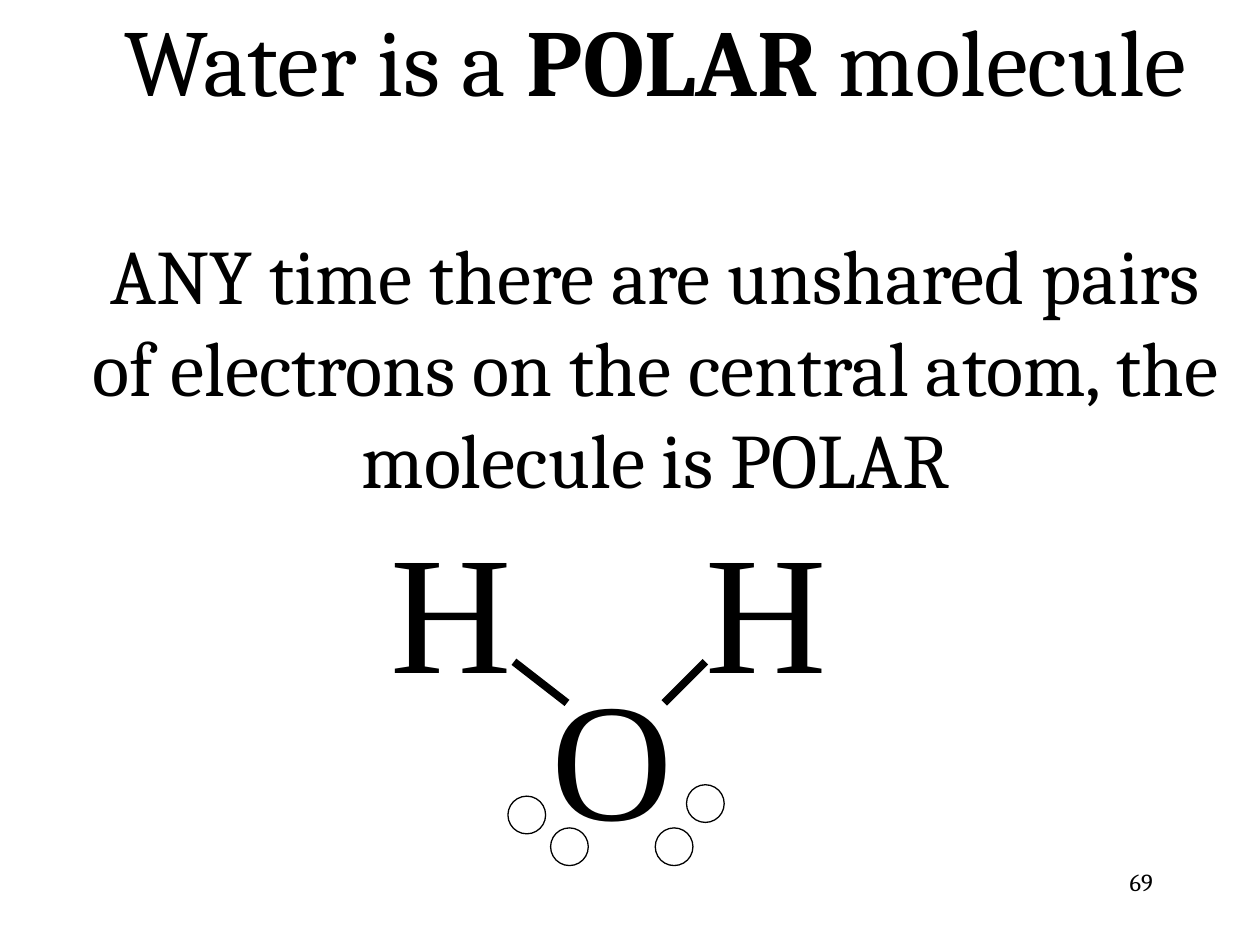
from typing import NamedTuple

import pptx
import pptx.dml.color
import pptx.enum.shapes
import pptx.enum.text
import pptx.oxml.ns
import pptx.util
from lxml import etree

Cm = pptx.util.Cm
Pt = pptx.util.Pt
Align = pptx.enum.text.PP_ALIGN
Anchor = pptx.enum.text.MSO_ANCHOR

COLORS = {"ink": "000000", "paper": "FFFFFF"}
BODY_FONT = "Cambria"
ATOM_FONT = "Times New Roman"
ATOM_WIDTH, ATOM_HEIGHT = 3.0, 4.32
ELECTRON_SIZE = 0.76


class Atom(NamedTuple):
    symbol: str
    center: float
    top: float


class Bond(NamedTuple):
    x1: float
    y1: float
    x2: float
    y2: float


class Electron(NamedTuple):
    left: float
    top: float


ATOMS = [Atom("H", 15.44, 10.19), Atom("H", 9.09, 10.19), Atom("O", 12.34, 13.16)]
BONDS = [Bond(10.36, 13.34, 11.43, 14.17), Bond(13.39, 14.17, 14.22, 13.34)]
ELECTRONS = [
    Electron(13.84, 15.82),
    Electron(13.21, 16.69),
    Electron(11.1, 16.69),
    Electron(10.24, 16.05),
]


def color(name: str) -> pptx.dml.color.RGBColor:
    return pptx.dml.color.RGBColor.from_string(COLORS[name])


def add_box(s, left: float, top: float, width: float, height: float):
    tf = s.shapes.add_textbox(Cm(left), Cm(top), Cm(width), Cm(height)).text_frame
    tf.word_wrap = True
    return tf


def style_run(r, size: int, font: str = BODY_FONT, bold: bool = False) -> None:
    r.font.size = Pt(size)
    r.font.name = font
    r.font.bold = bold
    r.font.color.rgb = color("ink")


def draw_atom(s, atom: Atom) -> None:
    tf = add_box(s, atom.center - ATOM_WIDTH / 2, atom.top, ATOM_WIDTH, ATOM_HEIGHT)
    tf.margin_left = tf.margin_right = tf.margin_top = tf.margin_bottom = 0
    tf.text = atom.symbol
    p = tf.paragraphs[0]
    p.alignment = Align.CENTER
    style_run(p.runs[0], 96, ATOM_FONT)


def draw_electron(s, electron: Electron) -> None:
    sp = s.shapes.add_shape(
        pptx.enum.shapes.MSO_SHAPE.FLOWCHART_CONNECTOR,
        Cm(electron.left), Cm(electron.top), Cm(ELECTRON_SIZE), Cm(ELECTRON_SIZE),
    )
    sp.shadow.inherit = False
    sp.fill.solid()
    sp.fill.fore_color.rgb = color("paper")
    sp.line.color.rgb = color("ink")
    sp.line.width = Pt(0.75)


def draw_bond(s, bond: Bond) -> None:
    line = s.shapes.add_connector(
        pptx.enum.shapes.MSO_CONNECTOR.STRAIGHT, *(Cm(v) for v in bond)
    )
    line.line.color.rgb = color("ink")
    line.line.width = Pt(4.5)
    etree.SubElement(line._element.spPr, pptx.oxml.ns.qn("a:effectLst"))


def draw_title(s) -> None:
    tf = add_box(s, 1.47, 3.51, 23.5, 3.18)
    tf.vertical_anchor = Anchor.MIDDLE
    p = tf.paragraphs[0]
    p.alignment = Align.CENTER
    for text, bold in [("Water is a ", False), ("POLAR ", True), ("molecule", False)]:
        r = p.add_run()
        r.text = text
        style_run(r, 54, bold=bold)
    p = tf.add_paragraph()
    p.text = (
        "ANY time there are unshared pairs of electrons on the central atom, "
        "the molecule is POLAR"
    )
    p.alignment = Align.CENTER
    p.space_before = Pt(64)
    style_run(p.runs[0], 44)


def draw_slide_number(s) -> None:
    tf = add_box(s, 18.21, 17.35, 5.28, 1.27)
    tf.text = "69"
    p = tf.paragraphs[0]
    p.alignment = Align.RIGHT
    style_run(p.runs[0], 14)


def main() -> None:
    prs = pptx.Presentation()
    prs.slide_width, prs.slide_height = Cm(25.4), Cm(19.05)
    s = prs.slides.add_slide(prs.slide_layouts[6])
    for atom in ATOMS:
        draw_atom(s, atom)
    for electron in ELECTRONS:
        draw_electron(s, electron)
    draw_title(s)
    for bond in BONDS:
        draw_bond(s, bond)
    draw_slide_number(s)
    prs.save("out.pptx")


if __name__ == "__main__":
    main()
